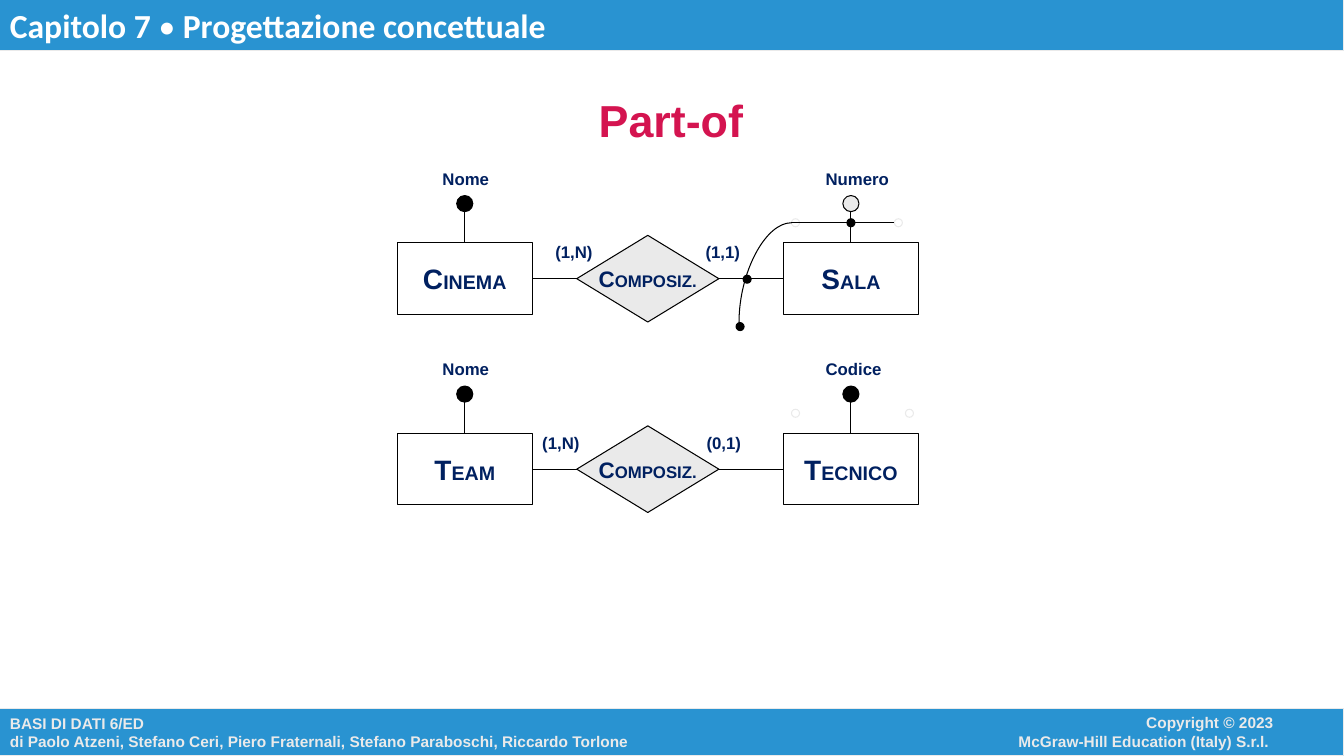
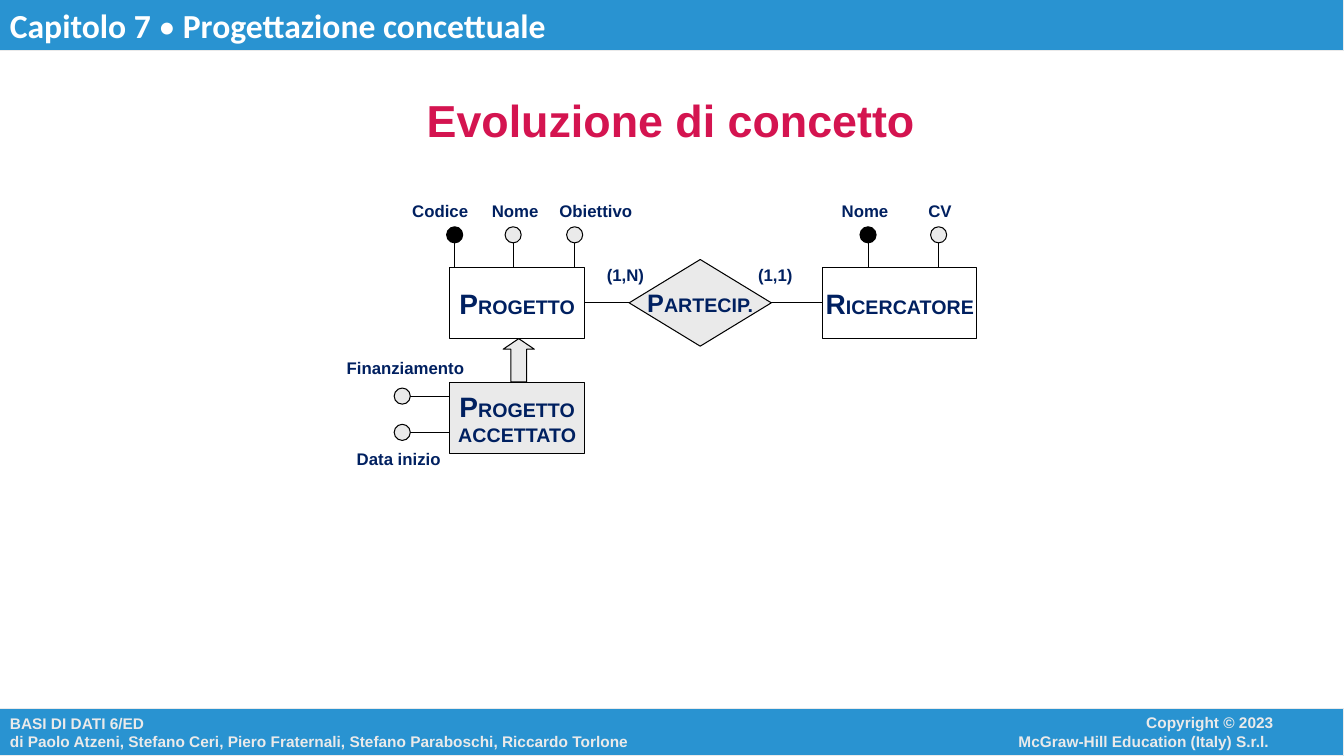
from dataclasses import dataclass
from typing import Optional

from lxml import etree
from pptx import Presentation, slide as slides, util as u
from pptx.dml.color import RGBColor
from pptx.enum import shapes, text
from pptx.oxml import ns
from pptx.shapes import autoshape, connector
from pptx.text import text as words

BLUE = RGBColor(0x29, 0x93, 0xD1)
CRIMSON = RGBColor(0xD4, 0x14, 0x50)
NAVY = RGBColor(0x00, 0x20, 0x60)
GREY = RGBColor(0xEA, 0xEA, 0xEA)
BLACK = RGBColor(0, 0, 0)
WHITE = RGBColor(255, 255, 255)

PAGE_WIDTH, PAGE_HEIGHT = 13.33, 7.5
BOX_HEIGHT = 0.71
DIAMOND_WIDTH, DIAMOND_HEIGHT = 1.41, 0.86
KNOB = 0.16
DOT = 0.08
ROW_GAP = 1.89
KIND = shapes.MSO_SHAPE
TOP, LEFT, RIGHT = 0, 1, 3


@dataclass(frozen=True)
class Label:
    text: str
    left: float
    top: float
    width: float


@dataclass(frozen=True)
class Attribute:
    """A knob centred at x, y; without x it stands over the middle of its entity."""
    label: Label
    y: float
    x: Optional[float] = None
    key: bool = False


@dataclass(frozen=True)
class Entity:
    lines: tuple[str, ...]
    left: float
    top: float
    attributes: tuple[Attribute, ...]
    width: float = 1.34
    fill: Optional[RGBColor] = None


@dataclass(frozen=True)
class Relationship:
    name: str
    left: float
    source: Entity
    target: Entity
    cardinalities: tuple[Label, Label]
    sizes: tuple[int, int]


def style_font(font: words.Font, size: Optional[float], color: RGBColor,
               name: str = "Arial", bold: Optional[bool] = True) -> None:
    font.name, font.bold = name, bold
    font.color.rgb = color
    if size:
        font.size = u.Pt(size)


def add_shape(page: slides.Slide, kind: KIND, left: float, top: float,
              width: float, height: float, fill: Optional[RGBColor] = None,
              line: RGBColor = BLACK, weight: float = 0.75) -> autoshape.Shape:
    shape = page.shapes.add_shape(kind, u.Inches(left), u.Inches(top),
                                  u.Inches(width), u.Inches(height))
    shape.shadow.inherit = False
    if fill is None:
        shape.fill.background()
    else:
        shape.fill.solid()
        shape.fill.fore_color.rgb = fill
    shape.line.color.rgb = line
    shape.line.width = u.Pt(weight)
    return shape


def add_circle(page: slides.Slide, x: float, y: float, size: float,
               fill: Optional[RGBColor] = BLACK, line: RGBColor = BLACK) -> None:
    add_shape(page, KIND.OVAL, x - size / 2, y - size / 2, size, size, fill, line)


def add_line(page: slides.Slide, x1: float, y1: float, x2: float, y2: float,
             kind: shapes.MSO_CONNECTOR = shapes.MSO_CONNECTOR.STRAIGHT) -> connector.Connector:
    line = page.shapes.add_connector(kind, u.Inches(x1), u.Inches(y1),
                                     u.Inches(x2), u.Inches(y2))
    line.line.color.rgb = BLACK
    line.line.width = u.Pt(0.75)
    etree.SubElement(line._element.spPr, ns.qn("a:effectLst"))
    return line


def add_label(page: slides.Slide, label: Label) -> None:
    box = page.shapes.add_textbox(u.Inches(label.left), u.Inches(label.top),
                                  u.Inches(label.width), u.Inches(0.3))
    box.text_frame.word_wrap = False
    box.text_frame.auto_size = text.MSO_AUTO_SIZE.SHAPE_TO_FIT_TEXT
    para = box.text_frame.paragraphs[0]
    para.text = label.text
    style_font(para.font, 12, NAVY)


def write_name(shape: autoshape.Shape, lines: tuple[str, ...], sizes: tuple[int, int]) -> None:
    """Write the lines in capitals, the very first letter larger."""
    frame = shape.text_frame
    frame.word_wrap = False
    frame.vertical_anchor = text.MSO_ANCHOR.MIDDLE
    first, *others = lines
    for index, parts in enumerate([(first[0], first[1:]), *[("", line) for line in others]]):
        para = frame.add_paragraph() if index else frame.paragraphs[0]
        para.alignment = text.PP_ALIGN.CENTER
        style_font(para.font, None, NAVY)
        for part, size in zip(parts, sizes):
            if part:
                span = para.add_run()
                span.text = part
                style_font(span.font, size, NAVY)


def add_attribute(page: slides.Slide, attribute: Attribute, entity: Entity,
                  box: autoshape.Shape) -> None:
    middle = entity.left + entity.width / 2
    x = middle if attribute.x is None else attribute.x
    y = attribute.y
    if x < entity.left:
        add_line(page, x + KNOB / 2, y, entity.left, y)
    else:
        stem = add_line(page, x, y + KNOB / 2, x, entity.top)
        if x == middle:
            stem.end_connect(box, TOP)
    add_circle(page, x, y, KNOB, BLACK if attribute.key else GREY)
    add_label(page, attribute.label)


def add_entity(page: slides.Slide, entity: Entity) -> autoshape.Shape:
    box = add_shape(page, KIND.RECTANGLE, entity.left, entity.top,
                    entity.width, BOX_HEIGHT, entity.fill)
    write_name(box, entity.lines, (20, 14))
    for attribute in entity.attributes:
        add_attribute(page, attribute, entity, box)
    return box


def add_relationship(page: slides.Slide, relation: Relationship) -> None:
    """Draw a relationship with both of its entities."""
    source = add_entity(page, relation.source)
    target = add_entity(page, relation.target)
    top = relation.source.top + (BOX_HEIGHT - DIAMOND_HEIGHT) / 2
    diamond = add_shape(page, KIND.DIAMOND, relation.left, top,
                        DIAMOND_WIDTH, DIAMOND_HEIGHT, GREY)
    write_name(diamond, (relation.name,), relation.sizes)
    for box, box_side, diamond_side in ((source, RIGHT, LEFT), (target, LEFT, RIGHT)):
        link = add_line(page, 0, 0, 1, 1)
        link.begin_connect(diamond, diamond_side)
        link.end_connect(box, box_side)
    for label in relation.cardinalities:
        add_label(page, label)


def add_bands(page: slides.Slide) -> None:
    footer = add_shape(page, KIND.RECTANGLE, 0, 7.03, PAGE_WIDTH, 0.47, BLUE, GREY)
    footer.text_frame.vertical_anchor = text.MSO_ANCHOR.MIDDLE
    para = footer.text_frame.paragraphs[0]
    para.text = ("BASI DI DATI 6/ED\vdi Paolo Atzeni, Stefano Ceri, Piero Fraternali, "
                 "Stefano Paraboschi, Riccardo Torlone")
    para.alignment = text.PP_ALIGN.LEFT
    style_font(para.font, 11, GREY)

    rights = page.shapes.add_textbox(u.Inches(8.89), u.Inches(7.03),
                                     u.Inches(3.84), u.Inches(0.46))
    rights.text_frame.word_wrap = True
    rights.text_frame.text = "Copyright © 2023\nMcGraw-Hill Education (Italy) S.r.l. "
    for para in rights.text_frame.paragraphs:
        para.alignment = text.PP_ALIGN.RIGHT
        style_font(para.font, 11, GREY)

    header = add_shape(page, KIND.RECTANGLE, 0, 0, PAGE_WIDTH, 0.5, BLUE, GREY, 0)
    header.text_frame.vertical_anchor = text.MSO_ANCHOR.TOP
    para = header.text_frame.paragraphs[0]
    para.alignment = text.PP_ALIGN.LEFT
    for part, bold in (("Capitolo 7 ", True), ("•", False), (" Progettazione concettuale", True)):
        span = para.add_run()
        span.text = part
        style_font(span.font, 24, WHITE, "Calibri", bold)


def add_page(deck: Presentation, heading: str) -> slides.Slide:
    page = deck.slides.add_slide(deck.slide_layouts[5])
    add_bands(page)
    title = page.shapes.title
    title.left, title.top = u.Inches(1.55), u.Inches(0.99)
    title.width, title.height = u.Inches(10.21), u.Inches(0.39)
    frame = title.text_frame
    frame.text = heading
    frame.auto_size = text.MSO_AUTO_SIZE.NONE
    frame.vertical_anchor = text.MSO_ANCHOR.MIDDLE
    frame.margin_top = frame.margin_bottom = 0
    para = frame.paragraphs[0]
    para.alignment = text.PP_ALIGN.CENTER
    style_font(para.font, 32, CRIMSON)
    return page


def composition(row: int, whole: str, part: str, part_label: tuple[str, float], part_key: bool,
                source_count: tuple[str, float], target_count: tuple[str, float]) -> Relationship:
    """Lay out one whole-part row; pairs are a text with its left or width."""
    top = 2.41 + row * ROW_GAP
    label_top, knob_y, count_top = top - 0.79, top - 0.39, top - 0.06
    name = Attribute(Label("Nome", 4.29, label_top, 0.66), knob_y, key=True)
    caption, width = part_label
    identifier = Attribute(Label(caption, 8.09, label_top, width), knob_y, key=part_key)
    return Relationship(
        "COMPOSIZ.", 5.72,
        Entity((whole,), 3.94, top, (name,)), Entity((part,), 7.77, top, (identifier,)),
        (Label(*source_count, count_top, 0.57), Label(*target_count, count_top, 0.54)),
        (16, 12))


def draw_part_of(deck: Presentation) -> None:
    page = add_page(deck, "Part-of")
    add_relationship(page, composition(0, "CINEMA", "SALA", ("Numero", 0.83), False,
                                       ("(1,N)", 5.41), ("(1,1)", 6.9)))
    add_relationship(page, composition(1, "TEAM", "TECNICO", ("Codice", 0.76), True,
                                       ("(1,N)", 5.28), ("(0,1)", 6.91)))

    bar_y = 2.21
    for x, y in ((7.89, bar_y), (8.91, bar_y), (7.89, bar_y + ROW_GAP), (9.02, bar_y + ROW_GAP)):
        add_circle(page, x, y, DOT, None, GREY)
    add_line(page, 7.85, bar_y, 8.87, bar_y)
    curve = add_line(page, 7.85, bar_y, 7.33, 3.2, shapes.MSO_CONNECTOR.CURVE)
    curve._element.spPr.find(ns.qn("a:prstGeom")).set("prst", "curvedConnector2")
    for x, y in ((7.34, 3.24), (7.41, 2.77), (8.44, bar_y)):
        add_circle(page, x, y, DOT)


def draw_evolution(deck: Presentation) -> None:
    page = add_page(deck, "Evoluzione di concetto")
    top, label_top, knob_y = 2.65, 1.94, 2.33
    project = Entity(("PROGETTO",), 4.46, top, (
        Attribute(Label("Codice", 3.99, label_top, 0.76), knob_y, 4.51, True),
        Attribute(Label("Nome", 4.78, label_top, 0.66), knob_y, 5.09),
        Attribute(Label("Obiettivo", 5.45, label_top, 0.92), knob_y, 5.7)))
    researcher = Entity(("RICERCATORE",), 8.16, top, (
        Attribute(Label("Nome", 8.25, label_top, 0.66), knob_y, 8.61, True),
        Attribute(Label("CV", 9.11, label_top, 0.43), knob_y, 9.31)), 1.53)
    accepted = Entity(("PROGETTO", "ACCETTATO"), 4.46, 3.79, (
        Attribute(Label("Finanziamento", 3.34, 3.5, 1.37), 3.93, 3.99),
        Attribute(Label("Data inizio", 3.44, 4.4, 1.03), 4.29, 3.99)), fill=GREY)
    add_relationship(page, Relationship(
        "PARTECIP.", 6.24, project, researcher,
        (Label("(1,N)", 5.92, 2.58, 0.57), Label("(1,1)", 7.42, 2.58, 0.54)), (18, 14)))
    arrow = add_shape(page, KIND.UP_ARROW, 4.99, top + BOX_HEIGHT, 0.31, 0.43, GREY)
    arrow.adjustments[0], arrow.adjustments[1] = 0.5, 0.34
    add_entity(page, accepted)


def main() -> None:
    deck = Presentation()
    deck.slide_width, deck.slide_height = u.Inches(PAGE_WIDTH), u.Inches(PAGE_HEIGHT)
    draw_part_of(deck)
    draw_evolution(deck)
    deck.save("out.pptx")


if __name__ == "__main__":
    main()
